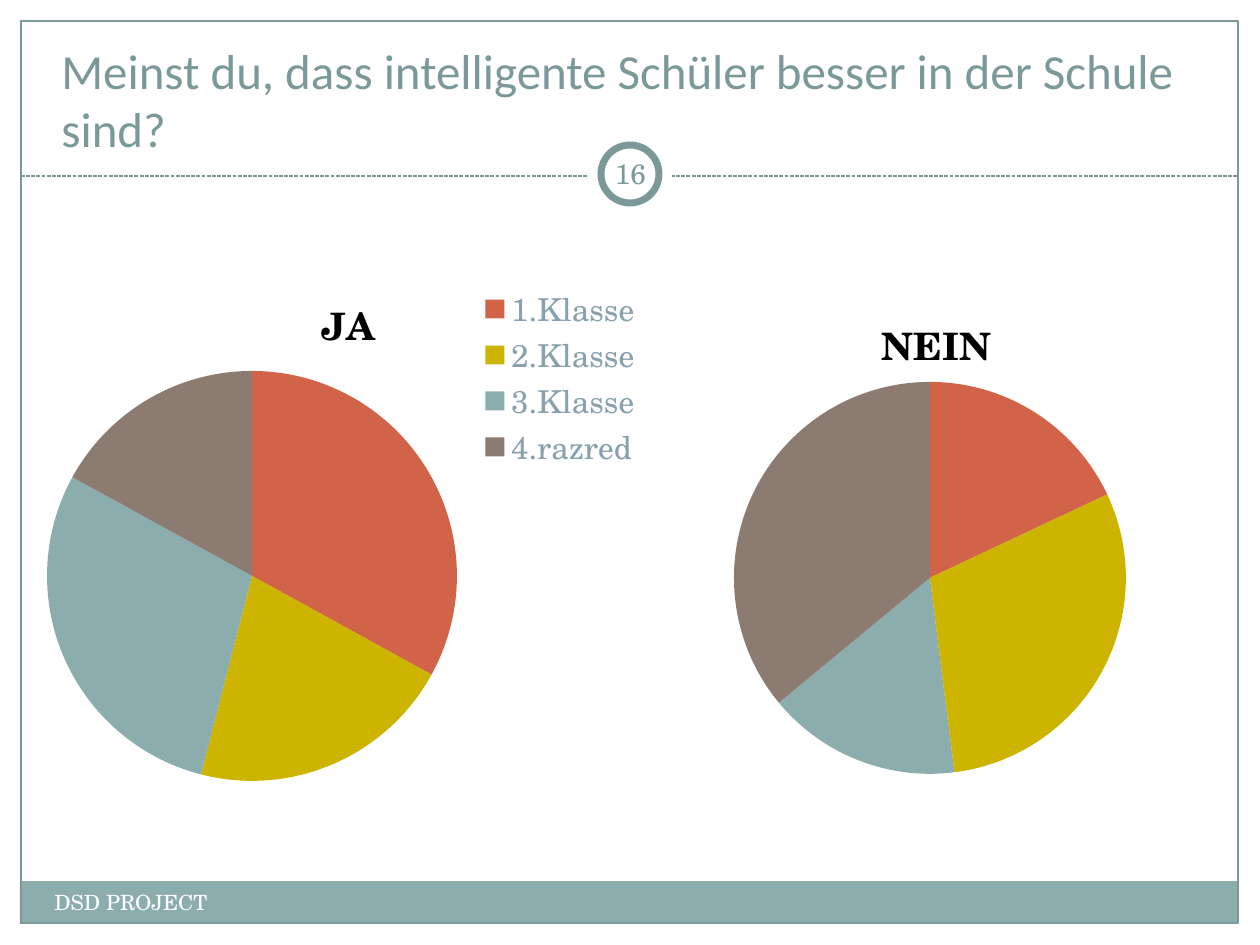
from lxml import etree
from pptx import Presentation
from pptx.chart.data import CategoryChartData
from pptx.dml.color import RGBColor
from pptx.enum.chart import XL_CHART_TYPE as CHART, XL_LEGEND_POSITION as LEGEND
from pptx.enum.dml import MSO_LINE
from pptx.enum.shapes import MSO_CONNECTOR, MSO_SHAPE as SHAPE
from pptx.enum.text import MSO_ANCHOR as ANCHOR, PP_ALIGN as ALIGN
from pptx.oxml.ns import qn
from pptx.util import Emu, Pt

WHITE = RGBColor(0xFF, 0xFF, 0xFF)
BLACK = RGBColor(0x00, 0x00, 0x00)
TEAL = RGBColor(0x7C, 0x99, 0x9A)
LIGHT_TEAL = RGBColor(0x8C, 0xAD, 0xAE)
LEGEND_BLUE = RGBColor(0x88, 0xA1, 0xAD)
CLASS_COLORS = (RGBColor(0xD1, 0x63, 0x49), RGBColor(0xCC, 0xB4, 0x00),
                LIGHT_TEAL, RGBColor(0x8C, 0x7B, 0x70))
HEADING_FONT = "Calibri"
BODY_FONT = "TeX Gyre Schola"
PX_PER_INCH = 126


def px(n):
    return Emu(round(n * 914400 / PX_PER_INCH))


def set_font(font, size, color, name=BODY_FONT, bold=False):
    font.size, font.name, font.bold = Pt(size), name, bold
    font.color.rgb = color


def set_layout(element, index, chart_box, box, inner=False):
    """Place a chart part at box = (left, top, width, height) in slide px;
    a box of two numbers sets the position only."""
    for old in element.findall(qn("c:layout")):
        element.remove(old)
    layout = etree.Element(qn("c:layout"))
    element.insert(index, layout)
    manual = etree.SubElement(layout, qn("c:manualLayout"))
    left, top, width, height = chart_box
    values = [("xMode", "edge"), ("yMode", "edge"),
              ("x", (box[0] - left) / width), ("y", (box[1] - top) / height)]
    if inner:
        values.insert(0, ("layoutTarget", "inner"))
    if len(box) == 4:
        values += [("w", box[2] / width), ("h", box[3] / height)]
    for tag, value in values:
        etree.SubElement(manual, qn(f"c:{tag}")).set("val", str(value))


class SlideBuilder:
    def __init__(self, prs):
        self.s = prs.slides.add_slide(prs.slide_layouts[6])

    def shape(self, kind, box, fill=None, line=None, width=0.75):
        sp = self.s.shapes.add_shape(kind, *map(px, box))
        sp.shadow.inherit = False
        if fill is None:
            sp.fill.background()
        else:
            sp.fill.solid()
            sp.fill.fore_color.rgb = fill
        if line is None:
            sp.line.fill.background()
        else:
            sp.line.color.rgb = line
            sp.line.width = Pt(width)

    def dashed_line(self, x1, y1, x2, y2, color):
        line = self.s.shapes.add_connector(
            MSO_CONNECTOR.STRAIGHT, *map(px, (x1, y1, x2, y2)))
        line.line.color.rgb = color
        line.line.width = Pt(0.75)
        line.line.dash_style = MSO_LINE.SQUARE_DOT
        etree.SubElement(line._element.spPr, qn("a:effectLst"))

    def text(self, text, box, size, color, font=BODY_FONT,
             anchor=ANCHOR.TOP, align=ALIGN.LEFT, inset=None):
        tf = self.s.shapes.add_textbox(*map(px, box)).text_frame
        tf.word_wrap = True
        tf.vertical_anchor = anchor
        if inset is not None:
            tf.margin_left = tf.margin_right = px(inset)
            tf.margin_top = tf.margin_bottom = px(inset)
        tf.text = text
        p = tf.paragraphs[0]
        p.alignment = align
        set_font(p.runs[0].font, size, color, font)

    def pie(self, title, categories, values, box, title_at, pie_box,
            legend_box=None):
        data = CategoryChartData()
        data.categories = categories
        data.add_series(title, values)
        chart = self.s.shapes.add_chart(CHART.PIE, *map(px, box), data).chart
        set_font(chart.font, 18, BLACK)

        tf = chart.chart_title.text_frame
        tf.text = title
        set_font(tf.paragraphs[0].runs[0].font, 21.6, BLACK, bold=True)
        chart.chart_title.include_in_layout = False
        set_layout(chart.chart_title._element, 1, box, title_at)

        plot = chart.plots[0]
        plot.vary_by_categories = True
        for i, color in enumerate(CLASS_COLORS):
            fill = plot.series[0].points[i].format.fill
            fill.solid()
            fill.fore_color.rgb = color
        plot_area = chart._chartSpace.chart.plotArea
        set_layout(plot_area, 0, box, pie_box, inner=True)

        chart.has_legend = legend_box is not None
        if legend_box:
            legend = chart.legend
            legend.position = LEGEND.RIGHT
            legend.include_in_layout = False
            set_font(legend.font, 18, LEGEND_BLUE)
            set_layout(legend._element, 1, box, legend_box)


def main():
    prs = Presentation()
    prs.slide_width, prs.slide_height = px(1260), px(945)
    b = SlideBuilder(prs)

    b.shape(SHAPE.RECTANGLE, (20, 881, 1218, 43), LIGHT_TEAL)
    b.shape(SHAPE.RECTANGLE, (21, 21, 1217, 902), line=TEAL)
    b.dashed_line(21, 176, 1238, 176, TEAL)
    b.shape(SHAPE.OVAL, (588, 132, 84, 84), WHITE)
    b.shape(SHAPE.OVAL, (601, 145, 58, 58), WHITE, TEAL, 4)

    b.text("Meinst du, dass intelligente Schüler besser in der Schule sind?",
           (49, 59, 1176, 105), 28, TEAL, HEADING_FONT, ANCHOR.BOTTOM)
    b.text("DSD PROJECT", (42, 883, 494, 50), 12, WHITE)
    b.text("16", (599, 143, 63, 60), 16, TEAL,
           anchor=ANCHOR.MIDDLE, align=ALIGN.CENTER, inset=6)

    b.pie("JA", ("1.Klasse", "2.Klasse", "3.Klasse", "4.razred"),
          (33, 21, 29, 17), (30, 246, 625, 559), (315, 284),
          (47, 371, 410, 410), legend_box=(478, 286, 164, 184))
    b.pie("NEIN", ("1", "2", "3", "4"), (18, 30, 16, 36),
          (600, 266, 660, 525), (875, 304), (734, 382, 392, 392))

    prs.save("out.pptx")


if __name__ == "__main__":
    main()
